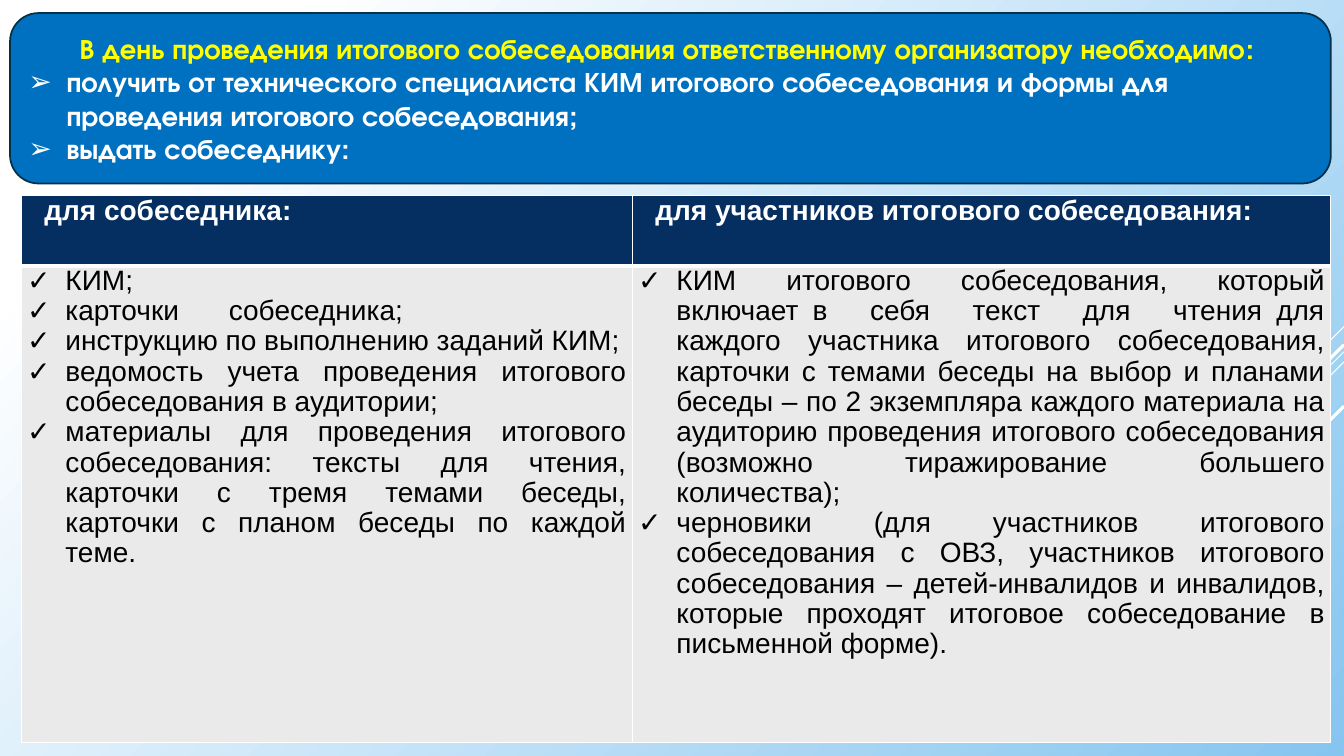
from lxml.etree import SubElement
from pptx import Presentation
from pptx.dml.color import RGBColor
from pptx.enum.shapes import MSO_CONNECTOR, MSO_SHAPE
from pptx.enum.text import MSO_ANCHOR, PP_ALIGN
from pptx.oxml import parse_xml
from pptx.oxml.ns import nsdecls, qn
from pptx.util import Inches, Pt

WHITE = RGBColor(0xFF, 0xFF, 0xFF)
BLACK = RGBColor(0x00, 0x00, 0x00)
YELLOW = RGBColor(0xFF, 0xFF, 0x00)
SKY = RGBColor(0x86, 0xC5, 0xEF)
BLUE = RGBColor(0x00, 0x70, 0xC0)
NAVY = RGBColor(0x05, 0x2F, 0x61)
DARK_EDGE = RGBColor(0x04, 0x31, 0x48)
GREY = RGBColor(0xEA, 0xEA, 0xEA)

TITLE = "В день проведения итогового собеседования ответственному организатору необходимо: "
TASKS = [
    "получить от технического специалиста КИМ итогового собеседования и формы для "
    "проведения итогового собеседования;",
    "выдать собеседнику:",
]
# heading, column width, tab stop, items
COLUMNS = [
    ("для собеседника:", 6.06, 0.3, [
        "КИМ;",
        "карточки\tсобеседника;",
        "инструкцию по выполнению заданий КИМ;",
        "ведомость учета проведения итогового собеседования в аудитории;",
        "материалы для проведения итогового собеседования: тексты для чтения, карточки "
        "с тремя темами беседы, карточки с планом беседы по каждой теме.",
    ]),
    ("для участников итогового собеседования:", 6.93, 0.22, [
        "КИМ итогового собеседования, который включает в   себя   текст   для   чтения "
        "для каждого участника итогового собеседования, карточки с темами беседы на "
        "выбор и планами беседы – по 2 экземпляра каждого материала на аудиторию "
        "проведения итогового собеседования (возможно тиражирование большего количества);",
        "черновики (для участников итогового собеседования с ОВЗ, участников итогового "
        "собеседования – детей-инвалидов и инвалидов, которые проходят итоговое "
        "собеседование в письменной форме).",
    ]),
]
ROW_HEIGHTS = [0.7, 4.73]
# top at the right edge, horizontal run of a 45° line, width in points
RAYS = [(3.24, 1.0, 0.75), (3.49, 3.26, 0.75), (3.59, 2.07, 0.75),
        (3.42, 1.91, 2.25), (4.03, 1.39, 2.25)]
SLIDE_WIDTH, SLIDE_HEIGHT = 13.33, 7.5

TITLE_FONT = {"name": "TeX Gyre Adventor", "size": Pt(20), "bold": True}
HEADING_FONT = {"name": "Arial", "size": Pt(20), "bold": True}
ITEM_FONT = {"name": "Arial", "size": Pt(20), "bold": False}


def write_paragraphs(frame, texts, font, color, align, indent=0.0, bullet=None, tab=None):
    """Fill empty paragraphs of the frame, adding more as needed."""
    for text in texts:
        paragraph = frame.paragraphs[-1]
        if paragraph.runs:
            paragraph = frame.add_paragraph()
        paragraph.alignment = align
        run = paragraph.add_run()
        run.text = text
        for name, value in font.items():
            setattr(run.font, name, value)
        run.font.color.rgb = color
        properties = paragraph._p.get_or_add_pPr()
        properties.set("marL", str(Inches(indent)))
        properties.set("indent", str(-Inches(indent) if bullet else 0))
        if tab:
            paragraph.line_spacing = 0.97
        if bullet:
            SubElement(properties, qn("a:buFont"), typeface="Arial")
            SubElement(properties, qn("a:buChar"), char=bullet)
        if tab:
            stops = SubElement(properties, qn("a:tabLst"))
            SubElement(stops, qn("a:tab"), pos=str(Inches(tab)), algn="l")


def style_cell(cell, color, top, bottom):
    """Set fill, margins and white borders; top and bottom are in points."""
    cell.fill.solid()
    cell.fill.fore_color.rgb = color
    cell.margin_left = cell.margin_right = Inches(0.06)
    cell.margin_top = cell.margin_bottom = 0
    borders = {"lnL": 1, "lnR": 1, "lnT": top, "lnB": bottom}
    for position, (tag, width) in enumerate(borders.items()):
        cell._tc.get_or_add_tcPr().insert(position, parse_xml(
            f'<a:{tag} {nsdecls("a")} w="{Pt(width)}"><a:solidFill>'
            f'<a:srgbClr val="{WHITE}"/></a:solidFill></a:{tag}>'))


def add_background(slide):
    fill = slide.background.fill
    fill.gradient()
    fill.gradient_angle = 315
    for stop, position, color in zip(fill.gradient_stops, (0.14, 1), (WHITE, SKY)):
        stop.position = position
        stop.color.rgb = color
    for top, run, width in RAYS:
        ray = slide.shapes.add_connector(
            MSO_CONNECTOR.STRAIGHT, Inches(SLIDE_WIDTH), Inches(top),
            Inches(SLIDE_WIDTH - run), Inches(top + run))
        ray.line.color.rgb = WHITE
        ray.line.width = Pt(width)
        SubElement(ray._element.spPr, qn("a:effectLst"))


def add_title_box(slide):
    box = slide.shapes.add_shape(MSO_SHAPE.ROUNDED_RECTANGLE, Inches(0.1), Inches(0.13),
                                 Inches(13.1), Inches(1.69))
    box.shadow.inherit = False
    box.fill.solid()
    box.fill.fore_color.rgb = BLUE
    box.line.color.rgb = DARK_EDGE
    box.line.width = Pt(1.25)
    frame = box.text_frame
    frame.word_wrap = True
    frame.vertical_anchor = MSO_ANCHOR.MIDDLE
    write_paragraphs(frame, [TITLE], TITLE_FONT, YELLOW, PP_ALIGN.CENTER)
    write_paragraphs(frame, TASKS, TITLE_FONT, WHITE, PP_ALIGN.LEFT, 0.38, "➢")


def add_materials_table(slide):
    total_width = sum(column[1] for column in COLUMNS)
    table = slide.shapes.add_table(
        len(ROW_HEIGHTS), len(COLUMNS), Inches(0.21), Inches(1.94),
        Inches(total_width), Inches(sum(ROW_HEIGHTS))).table
    for row, height in zip(table.rows, ROW_HEIGHTS):
        row.height = Inches(height)
    for index, (heading, width, tab, items) in enumerate(COLUMNS):
        table.columns[index].width = Inches(width)
        head, body = table.cell(0, index), table.cell(1, index)
        style_cell(head, NAVY, 1, 3)
        style_cell(body, GREY, 3, 1)
        write_paragraphs(head.text_frame, [heading], HEADING_FONT, WHITE,
                         PP_ALIGN.JUSTIFY, 0.17)
        write_paragraphs(body.text_frame, items, ITEM_FONT, BLACK,
                         PP_ALIGN.JUSTIFY, 0.38, "✓", tab)


def main():
    presentation = Presentation()
    presentation.slide_width = Inches(SLIDE_WIDTH)
    presentation.slide_height = Inches(SLIDE_HEIGHT)
    slide = presentation.slides.add_slide(presentation.slide_layouts[6])
    add_background(slide)
    add_title_box(slide)
    add_materials_table(slide)
    presentation.save("out.pptx")


if __name__ == "__main__":
    main()
